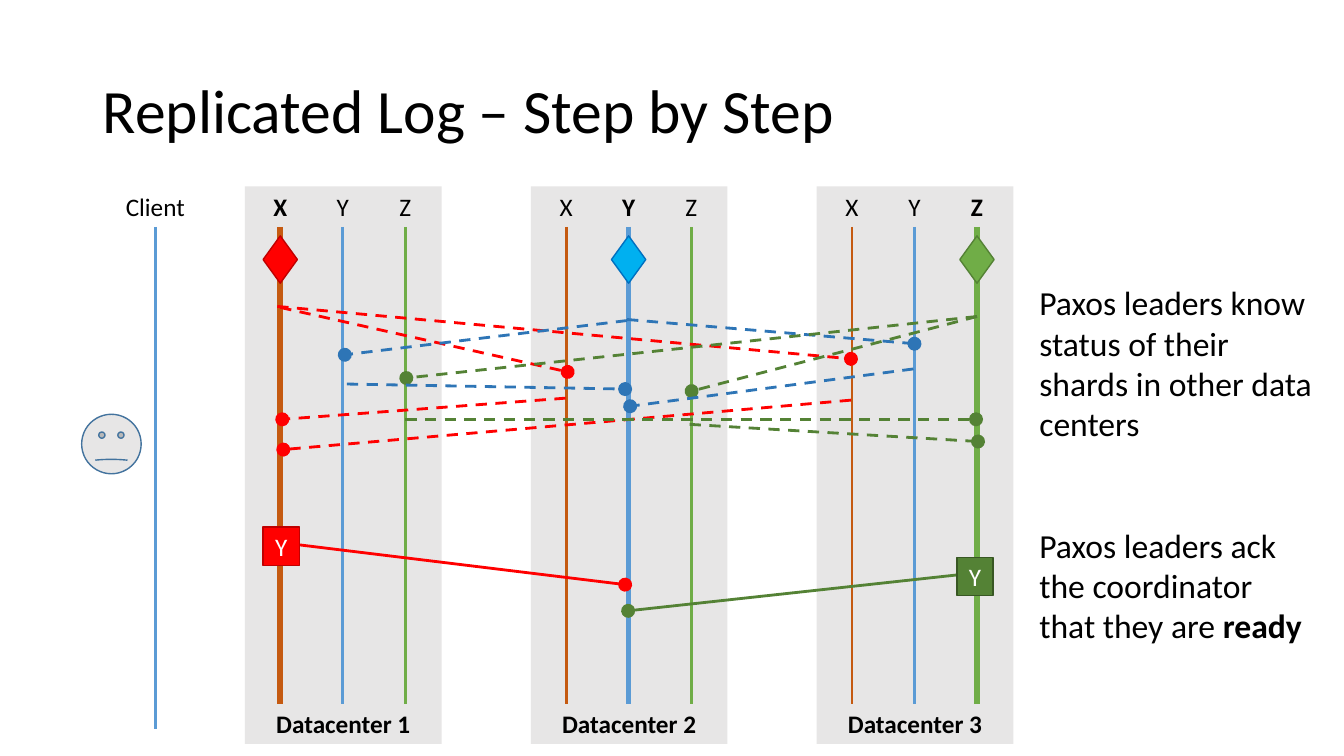
"""Build the replicated log slide with three datacenters."""
from lxml import etree
from pptx import Presentation
from pptx.dml.color import RGBColor
from pptx.enum import dml, shapes, text
from pptx.oxml import ns
from pptx.util import Inches, Pt

FONT = "Calibri"
BLACK, WHITE, GRAY = "000000", "FFFFFF", "E7E6E6"
RED, DARK_RED = "FF0000", "C00000"
BLUE, LIGHT_BLUE = "2E75B6", "5B9BD5"
GREEN, LIGHT_GREEN = "548235", "70AD47"
SHARDS = [("X", "C55A11"), ("Y", LIGHT_BLUE), ("Z", LIGHT_GREEN)]
LEADERS = [(RED, DARK_RED), ("00B0F0", "0070C0"), (LIGHT_GREEN, GREEN)]
LABEL_TOP, LANE_TOP, LANE_BOTTOM = 1.85, 2.25, 6.98
DATACENTER_LEFT, DATACENTER_STEP = 2.43, 2.835
LANE_INSET, LANE_STEP = 0.35, 0.62
STATUS_MESSAGES = [
    (RED, (2.78, 3.05), (5.63, 3.69)),
    (RED, (2.75, 3.04), (8.44, 3.56)),
    (RED, (5.61, 3.95), (2.8, 4.16)),
    (RED, (8.44, 3.97), (2.81, 4.46)),
    (BLUE, (6.22, 3.18), (3.42, 3.52)),
    (BLUE, (6.22, 3.17), (9.07, 3.41)),
    (GREEN, (9.69, 3.14), (6.86, 3.88)),
    (GREEN, (9.69, 3.14), (4.03, 3.75)),
    (GREEN, (6.84, 4.21), (9.7, 4.38)),
    (GREEN, (4.02, 4.16), (9.68, 4.16)),
    (BLUE, (3.44, 3.81), (6.2, 3.86)),
    (BLUE, (9.06, 3.66), (6.25, 4.03)),
]
READY_MESSAGES = [
    (RED, (2.76, 5.38), (6.2, 5.8)),
    (GREEN, (9.71, 5.68), (6.23, 6.06)),
]


def color(hex_code):
    """Return the colour for a hex string."""
    return RGBColor.from_string(hex_code)


def add_run(paragraph, words, size, ink=BLACK, bold=False):
    """Append one formatted run to a paragraph."""
    run = paragraph.add_run()
    run.text = words
    run.font.name = FONT
    run.font.size = Pt(size)
    run.font.bold = bold
    run.font.color.rgb = color(ink)


def add_textbox(parent, left, top, width, height, wrap=True):
    """Add an empty text box and return its text frame."""
    frame = parent.add_textbox(
        Inches(left), Inches(top), Inches(width), Inches(height)).text_frame
    frame.word_wrap = wrap
    return frame


def add_label(parent, center, words, bold=False, width=0.34):
    """Add a label centred above a lane."""
    frame = add_textbox(parent, center - width / 2, LABEL_TOP, width, 0.4, wrap=False)
    frame.paragraphs[0].alignment = text.PP_ALIGN.CENTER
    add_run(frame.paragraphs[0], words, 18, bold=bold)


def add_block(parent, kind, box, fill, outline=None):
    """Add a filled preset shape, outlined when a colour is given."""
    block = parent.add_shape(kind, *(Inches(length) for length in box))
    block.shadow.inherit = False
    block.fill.solid()
    block.fill.fore_color.rgb = color(fill)
    if outline:
        block.line.color.rgb = color(outline)
        block.line.width = Pt(1)
    else:
        block.line.fill.background()
    return block


def write_inside(block, words, anchor, ink, bold=False):
    """Write one centred line inside a shape."""
    frame = block.text_frame
    frame.vertical_anchor = anchor
    frame.paragraphs[0].alignment = text.PP_ALIGN.CENTER
    add_run(frame.paragraphs[0], words, 18, ink, bold)


def add_line(parent, start, end, ink, weight=2):
    """Add a straight line without a shadow."""
    line = parent.add_connector(
        shapes.MSO_CONNECTOR.STRAIGHT, *(Inches(length) for length in start + end))
    line.line.color.rgb = color(ink)
    line.line.width = Pt(weight)
    etree.SubElement(line._element.spPr, ns.qn("a:effectLst"))
    return line


def add_message(parent, ink, start, end, dashed=False):
    """Add a message line that ends in a large dot."""
    message = add_line(parent, start, end, ink)
    if dashed:
        message.line.dash_style = dml.MSO_LINE.DASH
    etree.SubElement(message.line._get_or_add_ln(), ns.qn("a:tailEnd"),
                     type="oval", w="lg", len="lg")


def lane_x(datacenter, shard):
    """Return the horizontal position of a shard lane."""
    return DATACENTER_LEFT + datacenter * DATACENTER_STEP + LANE_INSET + shard * LANE_STEP


def add_datacenter(slide, index):
    """Add a grouped datacenter panel with its three shard lanes."""
    group = slide.shapes.add_group_shape().shapes
    left = DATACENTER_LEFT + index * DATACENTER_STEP
    panel = add_block(group, shapes.MSO_SHAPE.RECTANGLE, (left, LABEL_TOP, 1.95, 5.53), GRAY)
    write_inside(panel, f"Datacenter {index + 1}", text.MSO_ANCHOR.BOTTOM, BLACK, bold=True)
    for shard, (name, ink) in enumerate(SHARDS):
        x = lane_x(index, shard)
        leads = shard == index
        add_label(group, x, name, bold=leads)
        add_line(group, (x, LANE_TOP), (x, LANE_BOTTOM), ink, 4 if leads else 2)


def add_vote(parent, box, fill, outline):
    """Add a square that holds a yes vote."""
    vote = add_block(parent, shapes.MSO_SHAPE.RECTANGLE, box, fill, outline)
    write_inside(vote, "Y", text.MSO_ANCHOR.MIDDLE, WHITE)


def add_title(parent):
    """Add the slide title."""
    title = add_textbox(parent, 0.92, 0.4, 11.5, 1.45)
    title.vertical_anchor = text.MSO_ANCHOR.MIDDLE
    title.paragraphs[0].line_spacing = 0.9
    add_run(title.paragraphs[0], "Replicated Log – Step by Step", 44)


def add_explanation(parent):
    """Add the two remarks beside the diagram."""
    remarks = add_textbox(parent, 10.21, 2.75, 2.92, 3.74)
    add_run(remarks.paragraphs[0],
            "Paxos leaders know status of their shards in other data centers", 24)
    ready = remarks.add_paragraph()
    ready.space_before = Pt(58)
    add_run(ready, "Paxos leaders ack the coordinator that they are ", 24)
    add_run(ready, "ready", 24, bold=True)


def main():
    """Build and save the slide."""
    deck = Presentation()
    deck.slide_width, deck.slide_height = Inches(13.33), Inches(7.5)
    slide = deck.slides.add_slide(deck.slide_layouts[6])
    canvas = slide.shapes

    add_title(canvas)
    add_label(canvas, 1.54, "Client", width=0.79)
    add_line(canvas, (1.54, LANE_TOP), (1.54, 7.23), LIGHT_BLUE)
    for index in range(len(LEADERS)):
        add_datacenter(slide, index)
    for index, (fill, outline) in enumerate(LEADERS):
        box = (lane_x(index, index) - 0.17, 2.34, 0.34, 0.47)
        add_block(canvas, shapes.MSO_SHAPE.DIAMOND, box, fill, outline)
    for ink, start, end in STATUS_MESSAGES:
        add_message(canvas, ink, start, end, dashed=True)
    add_explanation(canvas)
    for ink, start, end in READY_MESSAGES:
        add_message(canvas, ink, start, end)
    add_vote(canvas, (9.49, 5.53, 0.36, 0.38), GREEN, "385723")
    add_vote(canvas, (2.61, 5.23, 0.36, 0.38), RED, DARK_RED)
    client = add_block(canvas, shapes.MSO_SHAPE.SMILEY_FACE,
                       (0.81, 4.11, 0.59, 0.59), GRAY, "43739E")
    client.adjustments[0] = -0.007
    deck.save("out.pptx")


if __name__ == "__main__":
    main()
